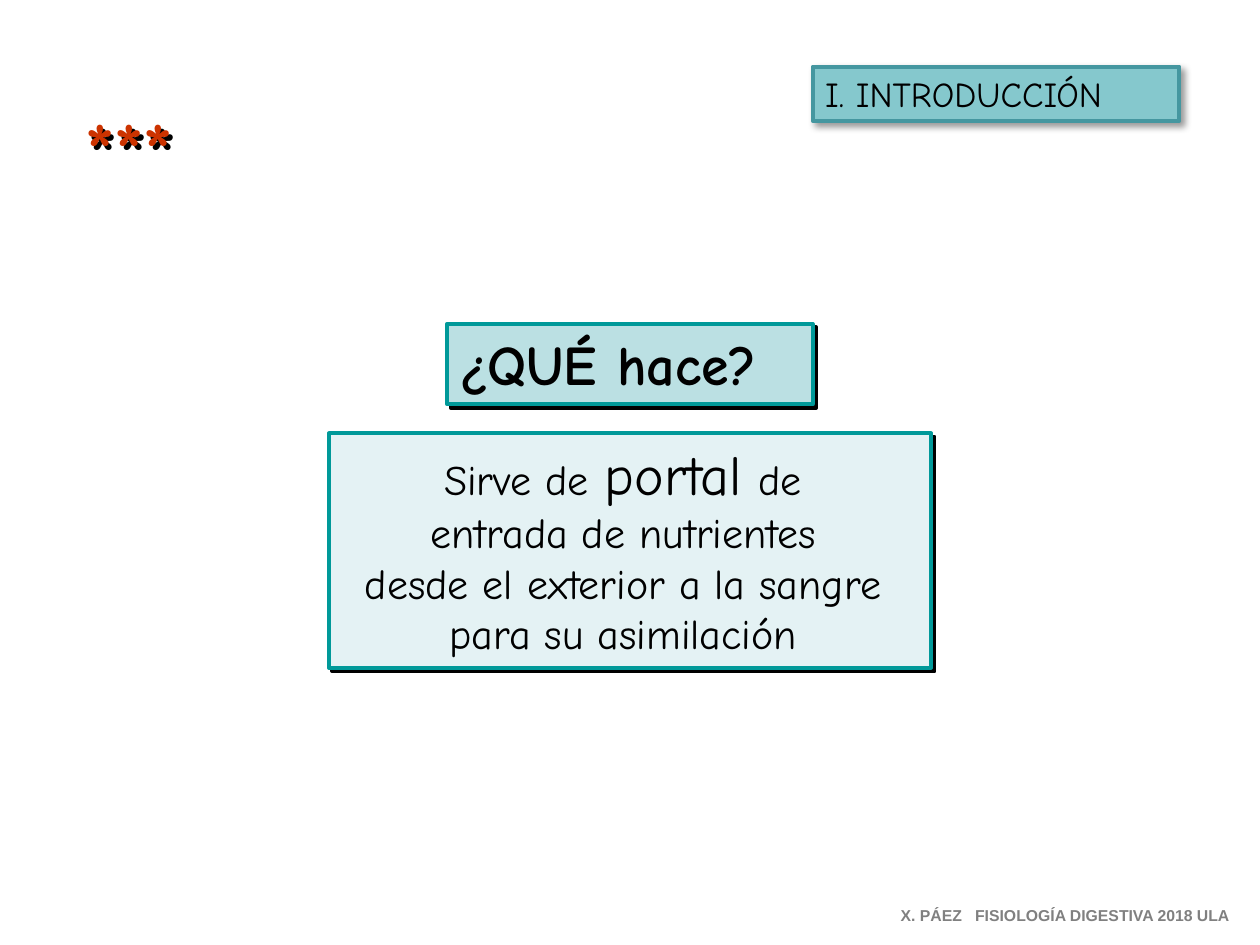
"""Build the introduction slide: what the digestive system does."""
from lxml import etree
from pptx import Presentation
from pptx.dml.color import RGBColor
from pptx.enum import shapes, text
from pptx.oxml import ns
from pptx.util import Inches, Pt

BLACK = RGBColor(0, 0, 0)
RED = RGBColor(0xCC, 0x33, 0x00)
GRAY = RGBColor(0x80, 0x80, 0x80)
TEAL = RGBColor(0x00, 0x99, 0x99)
STEEL = RGBColor(0x45, 0x97, 0xA0)
AQUA = RGBColor(0x85, 0xC8, 0xCD)
PALE = RGBColor(0xBB, 0xE0, 0xE3)
MIST = RGBColor(0xE4, 0xF2, 0xF4)

HAND = "Comic Neue"
SOFT = dict(alpha=40, blur=4, dist=3)
HARD = dict(alpha=100, blur=0, dist=2.8)

ANSWER = [
    [("Sirve de", 24), (" ", 28), ("portal", 32), (" ", 28), ("de ", 24)],
    [("entrada de nutrientes ", 24)],
    [("desde el exterior a la sangre ", 24)],
    [("para su asimilación ", 24)],
]
BOXES = [
    dict(at=(6.45, 0.53, 2.91, 0.43), fill=AQUA, line=STEEL, shadow=SOFT,
         lines=[[("I. INTRODUCCIÓN", 20)]]),
    dict(at=(3.55, 2.57, 2.9, 0.64), fill=PALE, line=TEAL, shadow=HARD,
         lines=[[("¿QUÉ hace?", 32)]], bold=True),
    dict(at=(2.61, 3.44, 4.78, 1.86), fill=MIST, line=TEAL, shadow=HARD,
         lines=ANSWER, align=text.PP_ALIGN.CENTER),
]
LABELS = [
    dict(at=(7.05, 7.14, 2.92, 0.25), font="Arial", color=GRAY, bold=True,
         lines=[[("X. PÁEZ   FISIOLOGÍA DIGESTIVA 2018 ULA", 9)]]),
    dict(at=(0.58, 0.75, 1.18, 0.84), color=RED, bold=True, shadow=HARD,
         lines=[[("***", 44)]]),
]


def add_shadow(s, alpha, blur, dist):
    s.shadow.inherit = False
    effects = s._element.spPr.find(ns.qn("a:effectLst"))
    outer = etree.SubElement(
        effects, ns.qn("a:outerShdw"), blurRad=str(Pt(blur)),
        dist=str(Pt(dist)), dir=str(45 * 60000), algn="tl", rotWithShape="0")
    color = etree.SubElement(outer, ns.qn("a:srgbClr"), val=str(BLACK))
    etree.SubElement(color, ns.qn("a:alpha"), val=str(alpha * 1000))


def write(s, lines, font=HAND, color=BLACK, bold=False,
          align=text.PP_ALIGN.LEFT):
    tf = s.text_frame
    tf.word_wrap = True
    tf.vertical_anchor = text.MSO_ANCHOR.TOP
    for i, runs in enumerate(lines):
        p = tf.add_paragraph() if i else tf.paragraphs[0]
        p.alignment = align
        p.font.name, p.font.bold = font, bold
        p.font.color.rgb = color
        for words, size in runs:
            r = p.add_run()
            r.text, r.font.size = words, Pt(size)


def add_box(slide, at, fill, line, shadow, **content):
    s = slide.shapes.add_shape(shapes.MSO_SHAPE.RECTANGLE, *map(Inches, at))
    s.fill.solid()
    s.fill.fore_color.rgb = fill
    s.line.color.rgb = line
    s.line.width = Pt(2.25)
    add_shadow(s, **shadow)
    write(s, **content)


def add_label(slide, at, shadow=None, **content):
    s = slide.shapes.add_textbox(*map(Inches, at))
    if shadow:
        add_shadow(s, **shadow)
    write(s, **content)


def main():
    prs = Presentation()
    prs.slide_width, prs.slide_height = Inches(10), Inches(7.5)
    slide = prs.slides.add_slide(prs.slide_layouts[6])
    for box in BOXES:
        add_box(slide, **box)
    for label in LABELS:
        add_label(slide, **label)
    prs.save("out.pptx")


if __name__ == "__main__":
    main()
